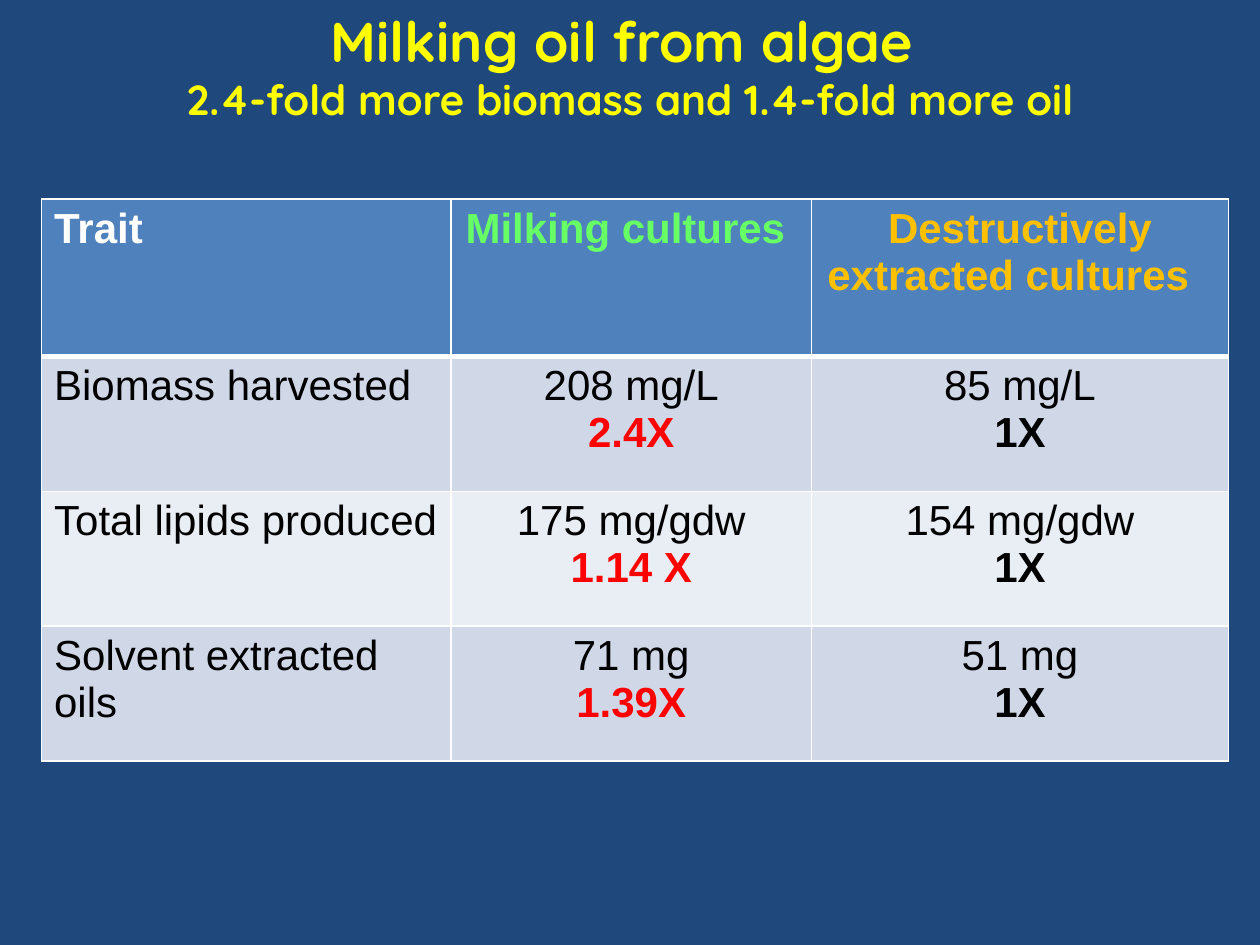
from lxml import etree
from pptx import Presentation
from pptx.dml.color import RGBColor
from pptx.enum.text import MSO_ANCHOR, MSO_AUTO_SIZE, PP_ALIGN
from pptx.oxml.ns import qn
from pptx.util import Inches, Pt

COLORS = {
    "background": "1F497D", "title": "FFFF00", "header": "4F81BD",
    "odd_row": "D0D8E8", "even_row": "E9EDF4", "white": "FFFFFF",
    "black": "000000", "milking": "66FF66", "destructive": "FFC000",
    "gain": "FF0000",
}
TITLE_LINES = [
    ("Milking oil from algae ", 32),
    ("2.4-fold more biomass and 1.4-fold more oil", 24),
]
HEADERS = [
    ("Trait", "white"),
    ("Milking cultures ", "milking"),
    ("Destructively extracted cultures  ", "destructive"),
]
# Trait, then amount and relative yield for each kind of culture
TRAITS = [
    ("Biomass harvested", ("208 mg/L", "2.4X"), ("85 mg/L", "1X")),
    ("Total lipids produced", ("175 mg/gdw", "1.14 X"), ("154 mg/gdw", "1X")),
    ("Solvent extracted oils", ("71 mg", "1.39X"), ("51 mg", "1X")),
]
COLUMN_WIDTHS = [3.25, 2.86, 3.31]
ROW_HEIGHTS = [1.25, 1.07, 1.07, 1.07]


def rgb(name):
    return RGBColor.from_string(COLORS[name])


def write_lines(text_frame, lines, font_name, alignment):
    """Write one paragraph per (text, size, color, bold) line."""
    for index, (text, size, color, bold) in enumerate(lines):
        paragraph = text_frame.paragraphs[0] if index == 0 else text_frame.add_paragraph()
        paragraph.alignment = alignment
        run = paragraph.add_run()
        run.text = text
        run.font.name = font_name
        run.font.size = Pt(size)
        run.font.bold = bold
        run.font.color.rgb = rgb(color)


def set_borders(cell, bottom_width):
    properties = cell._tc.get_or_add_tcPr()
    widths = {"a:lnL": 1, "a:lnR": 1, "a:lnT": 1, "a:lnB": bottom_width}
    for tag, width in widths.items():
        line = etree.SubElement(properties, qn(tag), w=str(Pt(width)))
        fill = etree.SubElement(line, qn("a:solidFill"))
        etree.SubElement(fill, qn("a:srgbClr"), val=COLORS["white"])


def fill_cell(cell, column, lines, fill, bottom_width=1):
    set_borders(cell, bottom_width)
    cell.fill.solid()
    cell.fill.fore_color.rgb = rgb(fill)
    alignment = PP_ALIGN.CENTER if column else PP_ALIGN.LEFT
    write_lines(cell.text_frame, lines, "Arial", alignment)


def add_title(slide):
    title = slide.shapes.title
    title.left, title.top = Inches(0), Inches(0)
    title.width, title.height = Inches(10), Inches(1.04)
    frame = title.text_frame
    frame.word_wrap = True
    frame.auto_size = MSO_AUTO_SIZE.NONE
    frame.vertical_anchor = MSO_ANCHOR.TOP
    lines = [(text, size, "title", True) for text, size in TITLE_LINES]
    write_lines(frame, lines, "Quicksand", PP_ALIGN.CENTER)


def add_trait_table(slide):
    table = slide.shapes.add_table(
        len(ROW_HEIGHTS), len(COLUMN_WIDTHS), Inches(0.33), Inches(1.58),
        Inches(sum(COLUMN_WIDTHS)), Inches(sum(ROW_HEIGHTS))).table
    for column, width in zip(table.columns, COLUMN_WIDTHS):
        column.width = Inches(width)
    for row, height in zip(table.rows, ROW_HEIGHTS):
        row.height = Inches(height)

    for column, (text, color) in enumerate(HEADERS):
        fill_cell(table.cell(0, column), column, [(text, 24, color, True)],
                  "header", bottom_width=3)
    for row, (trait, *yields) in enumerate(TRAITS, start=1):
        fill = "odd_row" if row % 2 else "even_row"
        fill_cell(table.cell(row, 0), 0, [(trait, 24, "black", False)], fill)
        for column, (amount, ratio) in enumerate(yields, start=1):
            ratio_color = "gain" if column == 1 else "black"
            lines = [(amount, 24, "black", False), (ratio, 24, ratio_color, True)]
            fill_cell(table.cell(row, column), column, lines, fill)


def main():
    presentation = Presentation()
    presentation.slide_width, presentation.slide_height = Inches(10), Inches(7.5)
    slide = presentation.slides.add_slide(presentation.slide_layouts[5])
    slide.background.fill.solid()
    slide.background.fill.fore_color.rgb = rgb("background")
    add_trait_table(slide)
    add_title(slide)
    presentation.save("out.pptx")


if __name__ == "__main__":
    main()
